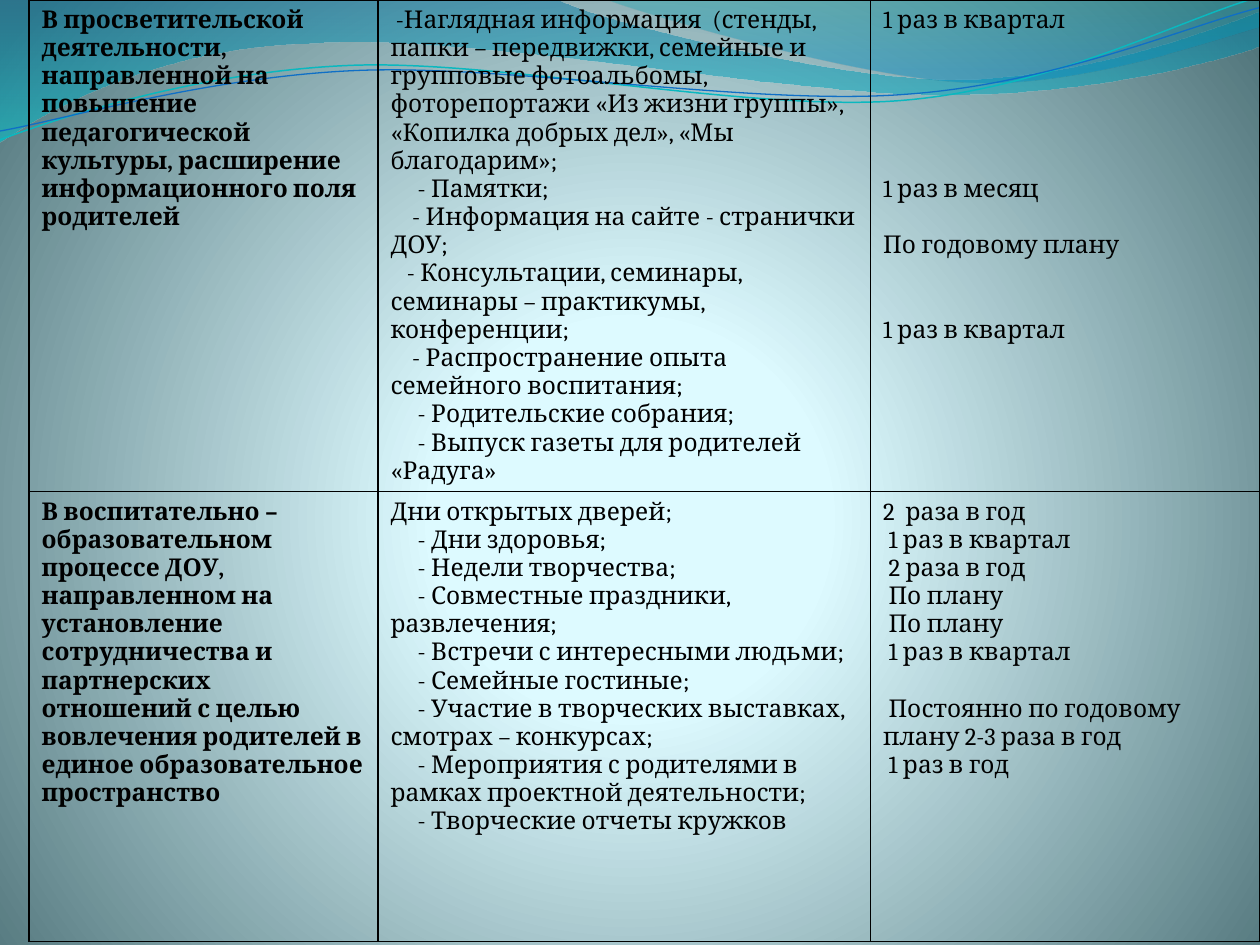
from dataclasses import dataclass
from math import cos, radians, sin

from lxml.etree import SubElement
from pptx import Presentation
from pptx.dml.color import RGBColor
from pptx.oxml.ns import qn
from pptx.util import Inches, Pt


@dataclass(frozen=True)
class Theme:
    font: str = "Cambria"
    text_size: float = 14
    line_height: float = 16.1
    indent_step: float = 3.1
    border_width: float = 1
    ink: str = "000000"
    teal_line: str = "0AB8BF"
    blue_line: str = "0F6FC6"
    # Gradient stops: position %, colour, opacity %
    background: tuple = ((0, "DEFBFF", 100), (25, "DDFAFF", 100), (100, "52767C", 100))
    wide_wave: tuple = ((0, "0074A1", 45), (100, "00C6CF", 55))
    right_wave: tuple = ((0, "00A1A9", 30), (80, "008BBF", 45))


THEME = Theme()

# Each outline: a start point, then line ends (2 numbers) or Bézier curves (6 numbers).
WIDE_WAVE = [
    (0, 0), (4.4, -0.01), (4.76, 0.17, 6.64, 0.63, 7.58, 0.63),
    (8.53, 0.63, 9.58, 0.26, 10, 0.09), (10.01, 0.36),
    (9.83, 0.44, 8.7, 0.76, 7.46, 0.75), (6.22, 0.75, 3.82, 0.28, 2.57, 0.34),
    (1.29, 0.36, 0.46, 0.83, -0.01, 1.13),
]
RIGHT_WAVE = [
    (4.79, -0.01), (5.09, 0.11, 6.82, 0.62, 7.69, 0.65),
    (8.56, 0.69, 9.61, 0.32, 10, 0.21), (10, 0),
]
TEAL_LINE = [
    (0, 1.11), (0.48, 0.93, 1.58, 0.57, 2.77, 0.52),
    (3.95, 0.47, 5.93, 0.89, 7.13, 0.8), (8.33, 0.71, 9.38, 0.15, 9.98, -0.02),
]
BLUE_LINE = [
    (0, 1.04), (0.47, 0.96, 1.64, 0.61, 2.83, 0.56),
    (4.03, 0.51, 5.97, 0.84, 7.17, 0.75), (8.36, 0.67, 9.41, 0.21, 10, 0.06),
]
LINE_TILT = -2.7
LINE_CENTER = (5, 0.58)

COLUMN_WIDTHS = (2.77, 3.91, 3.09)
ROW_HEIGHTS = (3.75, 3.57)
# Each paragraph: text, first-line indent steps, empty lines before it.
ROWS = [
    [
        [("В просветительской деятельности, направленной на повышение педагогической "
          "культуры, расширение информационного поля родителей", 0, 0)],
        [("-Наглядная информация  (стенды, папки – передвижки, семейные и групповые "
          "фотоальбомы, фоторепортажи «Из жизни группы», «Копилка добрых дел», "
          "«Мы благодарим»;", 1, 0),
         ("- Памятки;", 5, 0),
         ("- Информация на сайте - странички ДОУ;", 4, 0),
         ("- Консультации, семинары, семинары – практикумы, конференции;", 3, 0),
         ("- Распространение опыта семейного воспитания;", 4, 0),
         ("- Родительские собрания;", 5, 0),
         ("- Выпуск газеты для родителей «Радуга»", 5, 0)],
        [("1 раз в квартал", 0, 0),
         ("1 раз в месяц", 0, 5),
         ("По годовому плану", 0, 1),
         ("1 раз в квартал", 0, 2)],
    ],
    [
        [("В воспитательно – образовательном процессе ДОУ, направленном на установление "
          "сотрудничества и партнерских отношений с целью вовлечения родителей в единое "
          "образовательное пространство", 0, 0)],
        [("Дни открытых дверей;", 0, 0),
         ("- Дни здоровья;", 5, 0),
         ("- Недели творчества;", 5, 0),
         ("- Совместные праздники, развлечения;", 5, 0),
         ("- Встречи с интересными людьми;", 5, 0),
         ("- Семейные гостиные;", 5, 0),
         ("- Участие в творческих выставках, смотрах – конкурсах;", 5, 0),
         ("- Мероприятия с родителями в рамках проектной деятельности;", 5, 0),
         ("- Творческие отчеты кружков", 5, 0)],
        [("2  раза в год", 0, 0),
         ("1 раз в квартал", 1, 0),
         ("2 раза в год", 1, 0),
         ("По плану", 1, 0),
         ("По плану", 1, 0),
         ("1 раз в квартал", 1, 0),
         ("Постоянно по годовому плану 2-3 раза в год", 1, 1),
         ("1 раз в год", 1, 0)],
    ],
]


def add_solid_fill(parent, color):
    fill = SubElement(parent, qn("a:solidFill"))
    SubElement(fill, qn("a:srgbClr"), val=color)


def replace_with_gradient(properties, stops, radial=False):
    """Swap the solid fill in a properties element for a gradient."""
    solid = properties.find(qn("a:solidFill"))
    gradient = SubElement(properties, qn("a:gradFill"), rotWithShape="1")
    properties.replace(solid, gradient)
    stop_list = SubElement(gradient, qn("a:gsLst"))
    for position, color, opacity in stops:
        stop = SubElement(stop_list, qn("a:gs"), pos=str(position * 1000))
        color_element = SubElement(stop, qn("a:srgbClr"), val=color)
        if opacity < 100:
            SubElement(color_element, qn("a:alpha"), val=str(opacity * 1000))
    if radial:
        direction = SubElement(gradient, qn("a:path"), path="circle")
        SubElement(direction, qn("a:fillToRect"), l="10000", t="110000", r="10000", b="100000")
    else:
        SubElement(gradient, qn("a:lin"), ang="5400000", scaled="1")


def turn(point, center, degrees):
    x, y = point[0] - center[0], point[1] - center[1]
    cosine, sine = cos(radians(degrees)), sin(radians(degrees))
    return center[0] + x * cosine - y * sine, center[1] + x * sine + y * cosine


def add_outline(slide, left, top, segments, close, tilt=0):
    """Draw the segments as a freeform, with each six-number segment as a true curve."""
    points = [segment[i:i + 2] for segment in segments for i in range(0, len(segment), 2)]
    points = [turn(point, LINE_CENTER, -tilt) for point in points]
    points = [(Inches(left + x), Inches(top + y)) for x, y in points]
    builder = slide.shapes.build_freeform(*points[0])
    builder.add_line_segments(points[1:], close=close)
    shape = builder.convert_to_shape()
    lines = iter(list(shape._element.iter(qn("a:lnTo"))))
    for segment in segments[1:]:
        first = next(lines)
        if len(segment) == 6:
            first.tag = qn("a:cubicBezTo")
            for _ in range(2):
                extra = next(lines)
                first.append(extra[0])
                extra.getparent().remove(extra)
    shape.rotation = tilt
    shape.shadow.inherit = False
    return shape


def add_waves(slide, left, top):
    for segments, stops in ((WIDE_WAVE, THEME.wide_wave), (RIGHT_WAVE, THEME.right_wave)):
        wave = add_outline(slide, left, top, segments, close=True)
        wave.line.fill.background()
        wave.fill.solid()
        replace_with_gradient(wave._element.spPr, stops)
    for segments, color, width in ((TEAL_LINE, THEME.teal_line, 0.85),
                                   (BLUE_LINE, THEME.blue_line, 0.75)):
        curve = add_outline(slide, left, top, segments, close=False, tilt=LINE_TILT)
        curve.fill.background()
        curve.line.color.rgb = RGBColor.from_string(color)
        curve.line.width = Pt(width)


def style_cell(cell):
    properties = cell._tc.get_or_add_tcPr()
    for side in ("a:lnL", "a:lnR", "a:lnT", "a:lnB"):
        border = SubElement(properties, qn(side), w=str(Pt(THEME.border_width)))
        add_solid_fill(border, THEME.ink)
    cell.fill.background()


def write_cell(cell, paragraphs, bold):
    frame = cell.text_frame
    for index, (text, indent, gap) in enumerate(paragraphs):
        paragraph = frame.add_paragraph() if index else frame.paragraphs[0]
        if gap:
            paragraph.space_before = Pt(gap * THEME.line_height)
        if indent:
            properties = paragraph._p.get_or_add_pPr()
            properties.set("indent", str(Pt(indent * THEME.indent_step)))
        run = paragraph.add_run()
        run.text = text
        run.font.name, run.font.size = THEME.font, Pt(THEME.text_size)
        run.font.bold = bold
        run.font.color.rgb = RGBColor.from_string(THEME.ink)


def add_plan_table(slide, left, top, width, height):
    table = slide.shapes.add_table(
        len(ROWS), len(COLUMN_WIDTHS),
        Inches(left), Inches(top), Inches(width), Inches(height)).table
    table.first_row = table.horz_banding = False
    for column, share in zip(table.columns, COLUMN_WIDTHS):
        column.width = Inches(width * share / sum(COLUMN_WIDTHS))
    for row, share, contents in zip(table.rows, ROW_HEIGHTS, ROWS):
        row.height = Inches(height * share / sum(ROW_HEIGHTS))
        for index, (cell, paragraphs) in enumerate(zip(row.cells, contents)):
            style_cell(cell)
            write_cell(cell, paragraphs, bold=index == 0)


def main():
    presentation = Presentation()
    presentation.slide_width, presentation.slide_height = Inches(10), Inches(7.5)
    slide = presentation.slides.add_slide(presentation.slide_layouts[6])
    slide.background.fill.solid()
    background = slide._element.find(".//" + qn("p:bgPr"))
    replace_with_gradient(background, THEME.background, radial=True)
    add_waves(slide, 0, 0)
    add_plan_table(slide, 0.23, 0, 9.77, 7.32)
    presentation.save("out.pptx")


if __name__ == "__main__":
    main()
